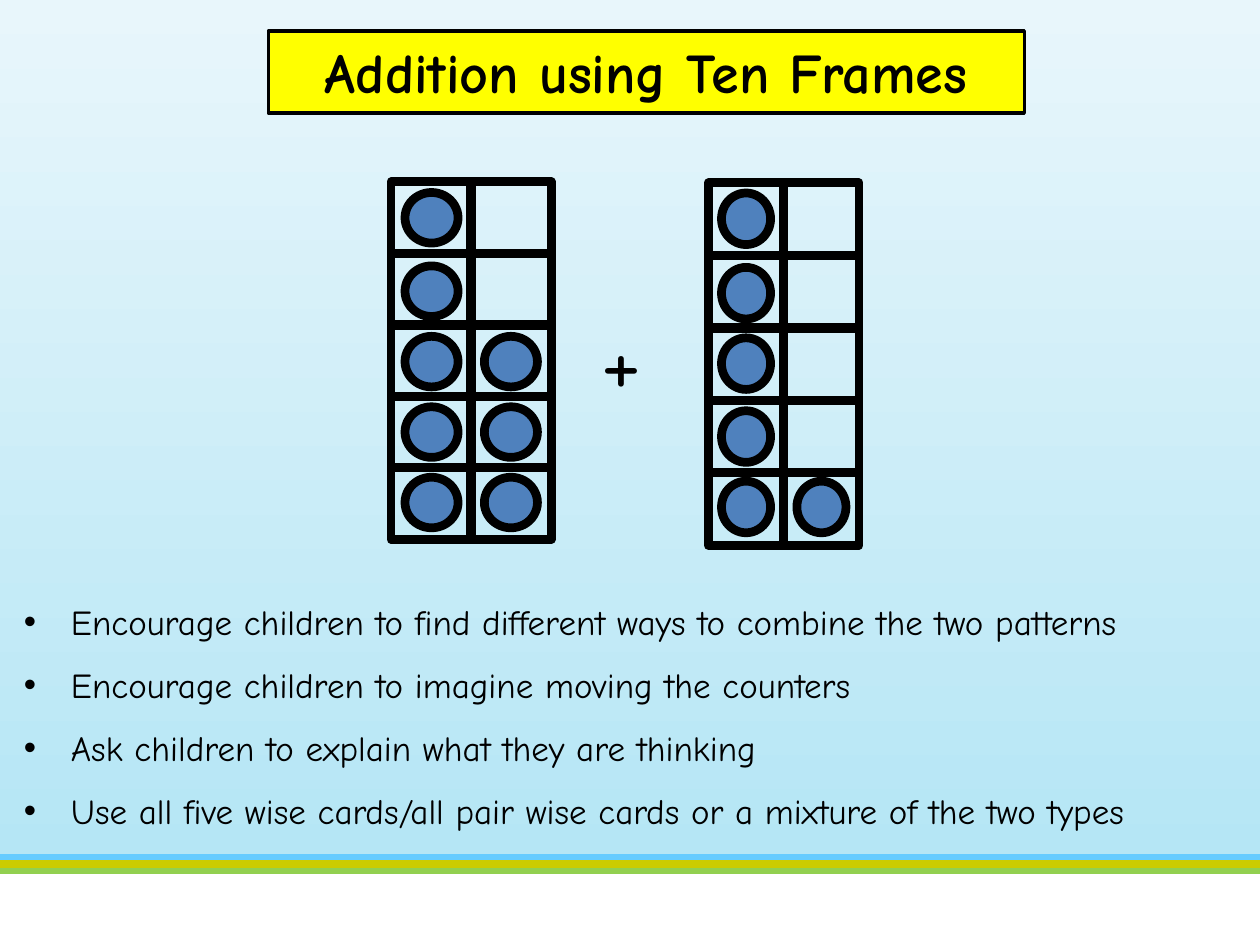
"""Build a slide on adding with two ten frames."""
from lxml import etree
from pptx import Presentation
from pptx.dml.color import RGBColor
from pptx.enum.shapes import MSO_CONNECTOR, MSO_SHAPE
from pptx.enum.text import MSO_ANCHOR, PP_ALIGN
from pptx.oxml.ns import qn
from pptx.util import Cm, Pt

RECT, OVAL = MSO_SHAPE.RECTANGLE, MSO_SHAPE.OVAL
LINE = MSO_CONNECTOR.STRAIGHT
TOP = MSO_ANCHOR.TOP
LEFT, MID = PP_ALIGN.LEFT, PP_ALIGN.CENTER
BLACK = RGBColor(0x00, 0x00, 0x00)
YELLOW = RGBColor(0xFF, 0xFF, 0x00)
BLUE = RGBColor(0x4F, 0x81, 0xBD)
DEEP = RGBColor(0xB5, 0xE6, 0xF5)
PALE = RGBColor(0xE8, 0xF6, 0xFB)
GREEN = RGBColor(0x92, 0xD0, 0x50)
SKY = RGBColor(0x66, 0xCC, 0xFF)
GOLD = RGBColor(0xCC, 0xCC, 0x00)


def mark(group, kind, x, y, size, fill=None):
    wide, high = size
    shape = group.shapes.add_shape(
        kind, Cm(x - wide / 2), Cm(y - high / 2), Cm(wide), Cm(high))
    shape.rotation = 270
    shape.shadow.inherit = False
    if fill is None:
        shape.fill.background()
    else:
        shape.fill.solid()
        shape.fill.fore_color.rgb = fill
    shape.line.color.rgb = BLACK
    shape.line.width = Pt(5)


def write(shape, lines, style, layout, bullet=False):
    frame = shape.text_frame
    frame.word_wrap = True
    frame.vertical_anchor = TOP
    for i, line in enumerate(lines):
        para = frame.paragraphs[0] if i == 0 else frame.add_paragraph()
        para.text = line
        for key, value in layout.items():
            setattr(para, key, value)
        if bullet:
            props = para._p.get_or_add_pPr()
            props.set("marL", str(Cm(0.95)))
            props.set("indent", str(Cm(-0.95)))
            etree.SubElement(props, qn("a:buFont")).set("typeface", "Arial")
            etree.SubElement(props, qn("a:buChar")).set("char", "•")
        for run in para.runs:
            for key, value in style.items():
                setattr(run.font, key, value)
            run.font.color.rgb = BLACK


deck = Presentation()
deck.slide_width, deck.slide_height = Cm(25.4), Cm(19.05)
slide = deck.slides.add_slide(deck.slide_layouts[6])
shapes = slide.shapes

sky = shapes.add_shape(RECT, 0, 0, Cm(25.4), Cm(17.3))
sky.shadow.inherit = False
sky.line.fill.background()
sky.fill.gradient()
sky.fill.gradient_angle = 90
for stop, color, place in zip(sky.fill.gradient_stops, (DEEP, PALE), (0, 1)):
    stop.color.rgb = color
    stop.position = place

for y, color in ((17.53, GREEN), (17.3, SKY), (17.42, GOLD)):
    stripe = shapes.add_connector(LINE, 0, Cm(y), Cm(25.4), Cm(y))
    stripe.line.color.rgb = color
    stripe.line.width = Pt(4.5)
    etree.SubElement(stripe._element.spPr, qn("a:effectLst"))

title = shapes.add_shape(RECT, Cm(5.41), Cm(0.63), Cm(15.24), Cm(1.65))
title.shadow.inherit = False
title.fill.solid()
title.fill.fore_color.rgb = YELLOW
title.line.color.rgb = BLACK
title.line.width = Pt(2)
write(title, ["Addition using Ten Frames"],
      {"name": "Comic Neue", "size": Pt(32), "bold": True},
      {"alignment": MID})

FRAMES = [
    {"cols": (15.04, 16.56), "top": 4.42, "step": 1.46,
     "cell": (1.47, 1.52), "dot": (1.04, 0.99), "first": 4,
     "rows": (4.41, 5.91, 7.33, 8.8, 10.22)},
    {"cols": (8.7, 10.3), "top": 4.39, "step": 1.44,
     "cell": (1.45, 1.63), "dot": (1.02, 1.07), "first": 2,
     "rows": (4.39, 5.87, 7.29, 8.71, 10.13)},
]
for ten in FRAMES:
    group = shapes.add_group_shape()
    for col, x in enumerate(ten["cols"]):
        for row, y in enumerate(ten["rows"]):
            mark(group, RECT, x, ten["top"] + row * ten["step"], ten["cell"])
            if col == 0 or row >= ten["first"]:
                mark(group, OVAL, x, y, ten["dot"], BLUE)

plus = shapes.add_textbox(Cm(11.86), Cm(5.92), Cm(3.2), Cm(2.57))
write(plus, ["+"], {"name": "Comic Neue", "size": Pt(54)},
      {"alignment": LEFT})

tips = shapes.add_textbox(Cm(0.23), Cm(11.56), Cm(25.1), Cm(6.4))
write(tips, [
    "Encourage children to find different ways to combine the two patterns",
    "Encourage children to imagine moving the counters",
    "Ask children to explain what they are thinking",
    "Use all five wise cards/all pair wise cards or a mixture of the two types",
], {"name": "Comic Neue", "size": Pt(20)},
    {"alignment": LEFT, "line_spacing": 1.5}, bullet=True)

deck.save("out.pptx")
